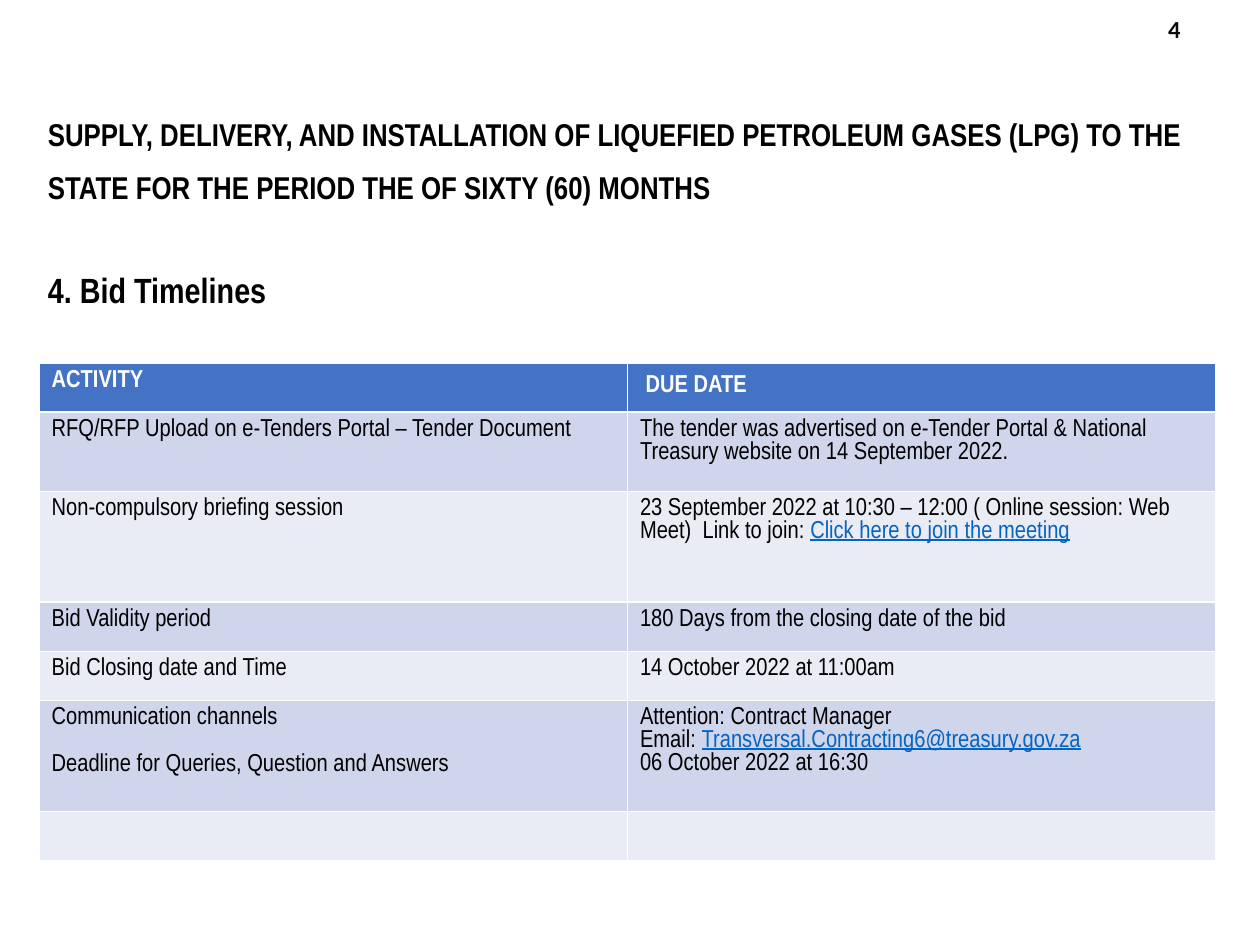
import pptx
import pptx.util
import pptx.dml.color
import pptx.enum.text

Inches = pptx.util.Inches
Pt = pptx.util.Pt
RGBColor = pptx.dml.color.RGBColor
ALIGN = pptx.enum.text.PP_ALIGN
ANCHOR = pptx.enum.text.MSO_ANCHOR

BLACK = RGBColor(0x00, 0x00, 0x00)
NEAR_BLACK = RGBColor(0x0D, 0x0D, 0x0D)
WHITE = RGBColor(0xFF, 0xFF, 0xFF)
HEADER_BLUE = RGBColor(0x44, 0x72, 0xC4)
BAND_DARK = RGBColor(0xCF, 0xD5, 0xEA)
BAND_LIGHT = RGBColor(0xE9, 0xEB, 0xF5)
LINK_BLUE = RGBColor(0x05, 0x63, 0xC1)

TITLE = ("SUPPLY, DELIVERY, AND INSTALLATION OF LIQUEFIED PETROLEUM GASES (LPG) "
         "TO THE STATE FOR THE PERIOD THE OF SIXTY (60) MONTHS")
SECTION = "4. Bid Timelines"

# A cell is a list of paragraphs; a paragraph is a list of (text, kind) runs.
ROWS = [
    (0.39, [[("ACTIVITY", "")]],
     [[(" ", "calibri"), ("DUE DATE", "")]]),
    (0.63, [[("RFQ/RFP Upload on e-Tenders Portal – Tender Document", "")]],
     [[("The tender was advertised on e-Tender Portal & National Treasury "
        "website on 14 September 2022.", "")]]),
    (0.88, [[("Non-compulsory briefing session", "")]],
     [[("23 September 2022 at 10:30 – 12:00 ( Online session: Web "
        "Meet)  Link to join: ", ""),
       ("Click here to join the meeting", "link")]]),
    (0.39, [[("Bid Validity period", "")]],
     [[("180 Days from the closing date of the bid", "")]]),
    (0.39, [[("Bid Closing date and Time", "")]],
     [[("14 October 2022 at 11:00am", "")]]),
    (0.88, [[("Communication channels", "")],
            [("Deadline for Queries, Question and Answers", "")]],
     [[("Attention: Contract Manager", "")],
      [("Email: ", ""), ("Transversal.Contracting6@treasury.gov.za", "link")],
      [("06 October 2022 at 16:30", "")]]),
    (0.39, [[]], [[]]),
]


class SlideBuilder:
    """Holds the text style and the slide being filled."""
    font = "Arial Narrow"
    number_font = "Calibri"
    body_size = 14

    def __init__(self, prs):
        self.slide = prs.slides.add_slide(prs.slide_layouts[5])

    def style(self, font, size, color, bold, name=None):
        font.name = name or self.font
        font.size = Pt(size)
        font.bold = bold
        font.color.rgb = color

    def title(self, left, top, width, height, heading, section):
        sp = self.slide.shapes.title
        sp.left, sp.top = Inches(left), Inches(top)
        sp.width, sp.height = Inches(width), Inches(height)
        tf = sp.text_frame
        tf.word_wrap = True
        tf.auto_size = pptx.enum.text.MSO_AUTO_SIZE.NONE
        tf.vertical_anchor = ANCHOR.MIDDLE
        p = tf.paragraphs[0]
        p.alignment = ALIGN.LEFT
        p.line_spacing = Pt(30)
        for text, size in ((heading, 18), (section, 20)):
            r = p.add_run()
            r.text = text
            self.style(r.font, size, BLACK, True)
            if text == heading:
                p.add_line_break()
                p.add_line_break()

    def page_number(self, left, top, width, height, text):
        sp = self.slide.shapes.add_textbox(
            Inches(left), Inches(top), Inches(width), Inches(height))
        tf = sp.text_frame
        tf.word_wrap = True
        tf.vertical_anchor = ANCHOR.MIDDLE
        tf.margin_right = Inches(0.17)
        p = tf.paragraphs[0]
        p.text = text
        p.alignment = ALIGN.RIGHT
        self.style(p.font, self.body_size, NEAR_BLACK, True, self.number_font)

    def cell(self, cell, paragraphs, fill, color, bold, gap):
        cell.fill.solid()
        cell.fill.fore_color.rgb = fill
        tf = cell.text_frame
        for i, runs in enumerate(paragraphs):
            p = tf.add_paragraph() if i else tf.paragraphs[0]
            if i and gap:
                p.space_before = Pt(gap)
            self.style(p.font, self.body_size, color, bold)
            for text, kind in runs:
                r = p.add_run()
                r.text = text
                if kind == "link":
                    r.font.color.rgb = LINK_BLUE
                    r.font.underline = True
                elif kind == "calibri":
                    r.font.name = self.number_font

    def table(self, left, top, width, rows):
        height = sum(row[0] for row in rows)
        table = self.slide.shapes.add_table(
            len(rows), 2, Inches(left), Inches(top),
            Inches(width), Inches(height)).table
        for i, (row_height, *cells) in enumerate(rows):
            table.rows[i].height = Inches(row_height)
            header = i == 0
            fill = HEADER_BLUE if header else (BAND_LIGHT, BAND_DARK)[i % 2]
            for j, paragraphs in enumerate(cells):
                # Activities in one cell stand a full line apart.
                self.cell(table.cell(i, j), paragraphs, fill,
                          WHITE if header else BLACK, header,
                          gap=13.5 if j == 0 else 0)


def main():
    prs = pptx.Presentation()
    prs.slide_width, prs.slide_height = Inches(10), Inches(7.5)
    s = SlideBuilder(prs)
    s.page_number(9.1, 0, 0.44, 0.45, "4")
    s.title(0.28, 1.12, 9.34, 1.02, TITLE, SECTION)
    s.table(0.31, 2.88, 9.34, ROWS)
    prs.save("out.pptx")


if __name__ == "__main__":
    main()
